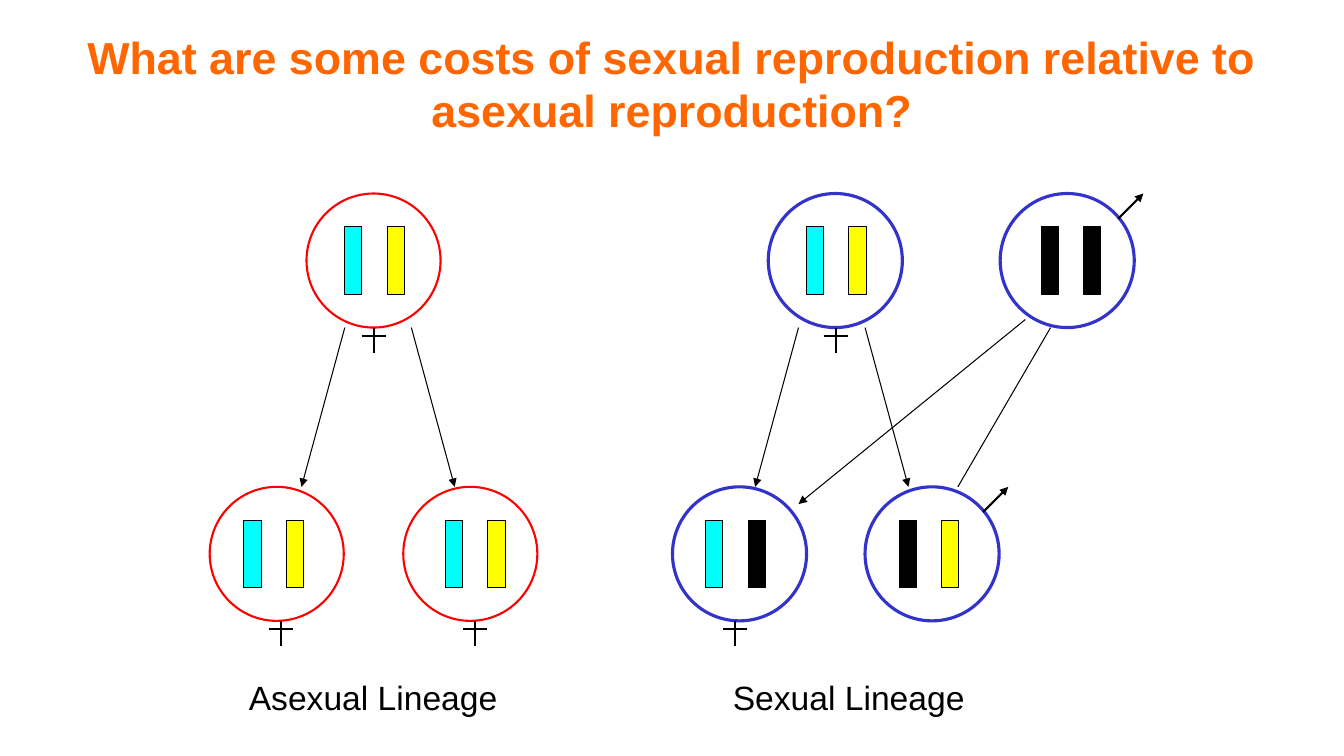
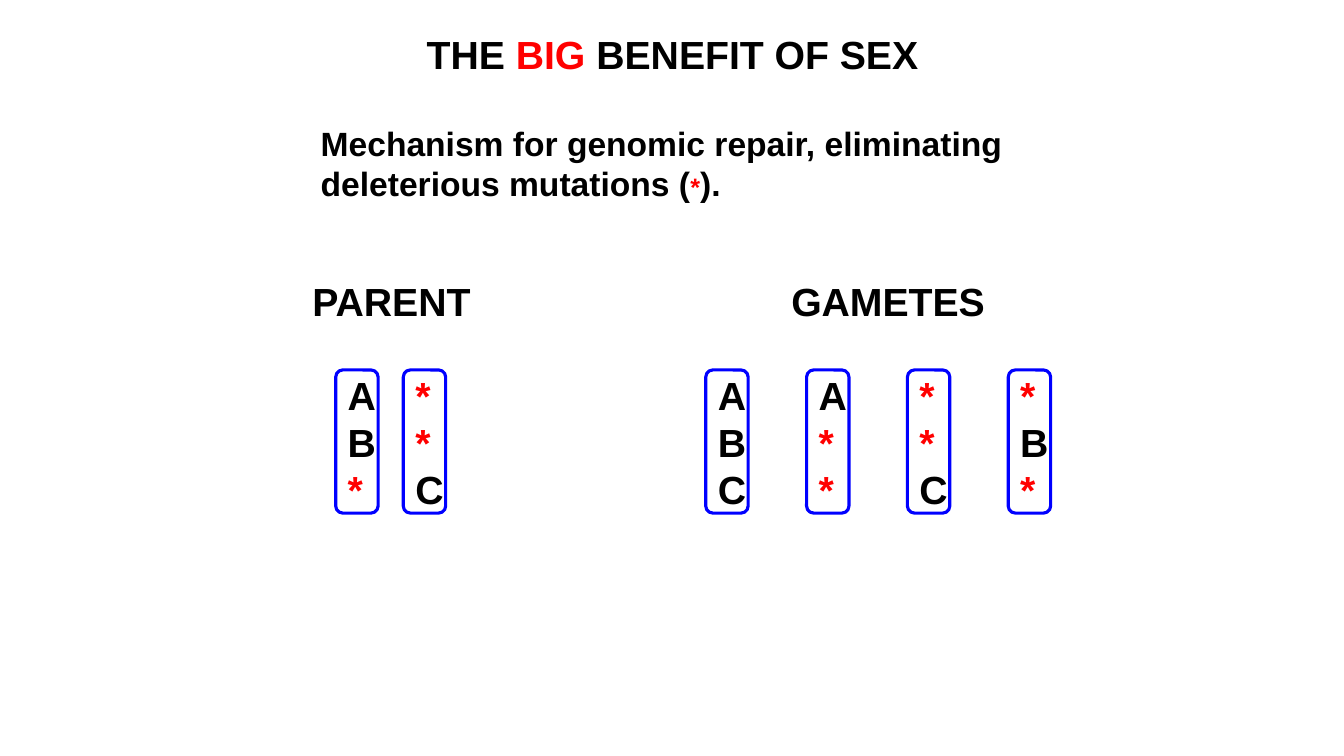
import pptx
import pptx.util
import pptx.dml.color
import pptx.enum.shapes
import pptx.enum.text
import pptx.oxml.ns
import lxml.etree

Inches = pptx.util.Inches
Pt = pptx.util.Pt
RGBColor = pptx.dml.color.RGBColor
Preset = pptx.enum.shapes.MSO_SHAPE
Align = pptx.enum.text.PP_ALIGN
Anchor = pptx.enum.text.MSO_ANCHOR

BLACK = RGBColor(0, 0, 0)
RED = RGBColor(0xFF, 0, 0)
ORANGE = RGBColor(0xFF, 0x66, 0)
CYAN = RGBColor(0, 0xFF, 0xFF)
YELLOW = RGBColor(0xFF, 0xFF, 0)
INDIGO = RGBColor(0x33, 0x33, 0xCC)
BLUE = RGBColor(0, 0, 0xFF)


class SlideBuilder:
    font = "Arial"
    cell_size = 1.33

    def __init__(self):
        self.deck = pptx.Presentation()
        self.deck.slide_width = Inches(13.33)
        self.deck.slide_height = Inches(7.5)
        self.page = None

    def new_page(self, layout_index):
        layout = self.deck.slide_layouts[layout_index]
        self.page = self.deck.slides.add_slide(layout)

    def add_spans(self, para, spans, size, bold=True):
        for text, color, *own_size in spans:
            span = para.add_run()
            span.text = text
            span.font.name = self.font
            span.font.size = Pt(own_size[0] if own_size else size)
            span.font.bold = bold
            span.font.color.rgb = color

    def fill_placeholder(self, holder, at, spans, size, align):
        holder.left, holder.top, holder.width, holder.height = map(Inches, at)
        frame = holder.text_frame
        frame.word_wrap = True
        frame.auto_size = pptx.enum.text.MSO_AUTO_SIZE.NONE
        frame.vertical_anchor = Anchor.TOP
        para = frame.paragraphs[0]
        para.alignment = align
        para.space_before = Pt(0)
        self.add_spans(para, spans, size)
        return para

    def title(self, at, spans, size):
        self.fill_placeholder(self.page.shapes.title, at, spans, size, Align.CENTER)

    def body(self, at, spans, size):
        para = self.fill_placeholder(self.page.placeholders[1], at, spans, size, Align.LEFT)
        properties = para._p.get_or_add_pPr()
        properties.set("marL", "0")
        properties.set("indent", "0")
        lxml.etree.SubElement(properties, pptx.oxml.ns.qn("a:buNone"))

    def label(self, left, top, text, size, bold):
        box = self.page.shapes.add_textbox(Inches(left), Inches(top), Inches(3), Inches(0.5))
        box.text_frame.word_wrap = True
        self.add_spans(box.text_frame.paragraphs[0], [(text, BLACK)], size, bold)

    def shape(self, preset, left, top, width, height, line, weight, fill=None):
        shape = self.page.shapes.add_shape(
            preset, Inches(left), Inches(top), Inches(width), Inches(height))
        shape.shadow.inherit = False
        shape.line.color.rgb = line
        shape.line.width = Pt(weight)
        if fill is None:
            shape.fill.background()
        else:
            shape.fill.solid()
            shape.fill.fore_color.rgb = fill
        return shape

    def line(self, start, end, weight=0.75, arrow=True, parent=None):
        shapes = (parent or self.page).shapes
        line = shapes.add_connector(
            pptx.enum.shapes.MSO_CONNECTOR.STRAIGHT, *map(Inches, (*start, *end)))
        line.line.color.rgb = BLACK
        line.line.width = Pt(weight)
        properties = line._element.spPr
        if arrow:
            outline = line.line._get_or_add_ln()
            lxml.etree.SubElement(outline, pptx.oxml.ns.qn("a:tailEnd"), type="triangle")
        lxml.etree.SubElement(properties, pptx.oxml.ns.qn("a:effectLst"))

    def female_mark(self, x, top):
        group = self.page.shapes.add_group_shape()
        self.line((x, top), (x, top + 0.25), 1.5, False, group)
        self.line((x - 0.12, top + 0.08), (x + 0.12, top + 0.08), 1.5, False, group)

    def male_mark(self, x, y):
        self.line((x, y), (x + 0.25, y - 0.25), 1.5)

    def cell(self, left, top, bars_left, colors, female_x, line, weight):
        self.shape(Preset.OVAL, left, top, self.cell_size, self.cell_size, line, weight)
        for index, color in enumerate(colors):
            self.shape(Preset.RECTANGLE, bars_left + 0.42 * index, top + 0.33,
                       0.17, 0.67, BLACK, 0.75, color)
        if female_x is None:
            self.male_mark(left + 1.17, top + 0.25)
        else:
            self.female_mark(female_x, top + self.cell_size)

    def chromosome(self, left, alleles):
        box = self.shape(Preset.ROUNDED_RECTANGLE, left, 3.67, 0.42, 1.42, BLUE, 2.25)
        frame = box.text_frame
        frame.word_wrap = True
        frame.vertical_anchor = Anchor.MIDDLE
        frame.margin_left = Inches(0.1)
        frame.margin_right = frame.margin_top = frame.margin_bottom = 0
        for index, allele in enumerate(alleles):
            para = frame.add_paragraph() if index else frame.paragraphs[0]
            para.alignment = Align.LEFT
            para.line_spacing = Pt(33.6)
            self.add_spans(para, [(allele, RED if allele == "*" else BLACK)], 28)


def build_costs(builder):
    builder.new_page(5)
    builder.title((0.34, 0.24, 12.65, 1.18), [
        ("What are some costs of sexual reproduction relative to asexual reproduction?", ORANGE),
    ], 32)
    parent_top, child_top = 1.92, 4.83
    asexual_cells = [
        (3.04, parent_top, 3.42, (CYAN, YELLOW), 3.71),
        (4, child_top, 4.42, (CYAN, YELLOW), 4.71),
        (2.08, child_top, 2.42, (CYAN, YELLOW), 2.79),
    ]
    sexual_cells = [
        (7.62, parent_top, 8, (CYAN, YELLOW), 8.29),
        (8.58, child_top, 8.92, (BLACK, YELLOW), None),
        (6.67, child_top, 7, (CYAN, BLACK), 7.29),
        (9.92, parent_top, 10.33, (BLACK, BLACK), None),
    ]
    for cells, color, weight in ((asexual_cells, RED, 1.5), (sexual_cells, INDIGO, 2.25)):
        for cell in cells:
            builder.cell(*cell, color, weight)
    for mother_x in (3.75, 8.25):
        for side in (-1, 1):
            builder.line((mother_x + 0.33 * side, 3.25), (mother_x + 0.76 * side, child_top))
    builder.line((10.17, 3.17), (7.92, 5))
    builder.line((10.42, 3.25), (9.5, child_top), arrow=False)
    builder.label(2.37, 6.67, "Asexual Lineage", 24, False)
    builder.label(7.17, 6.67, "Sexual Lineage", 24, False)


def build_benefit(builder):
    builder.new_page(1)
    builder.title((4.13, 0.25, 5.08, 0.57), [
        ("THE ", BLACK), ("BIG", RED), (" BENEFIT OF SEX", BLACK),
    ], 28)
    builder.body((3.08, 1.17, 7.18, 0.91), [
        ("Mechanism for genomic repair, eliminating deleterious mutations (", BLACK),
        ("*", RED, 18),
        (").", BLACK),
    ], 24)
    builder.label(3, 2.7, "PARENT", 28, True)
    builder.label(7.75, 2.7, "GAMETES", 28, True)
    families = [
        (3.33, 0.67, ("AB*", "**C")),
        (7, 1, ("ABC", "A**", "**C", "*B*")),
    ]
    for left, step, chromosomes in families:
        for index, alleles in enumerate(chromosomes):
            builder.chromosome(left + step * index, alleles)


def main():
    builder = SlideBuilder()
    build_costs(builder)
    build_benefit(builder)
    builder.deck.save("out.pptx")


if __name__ == "__main__":
    main()
